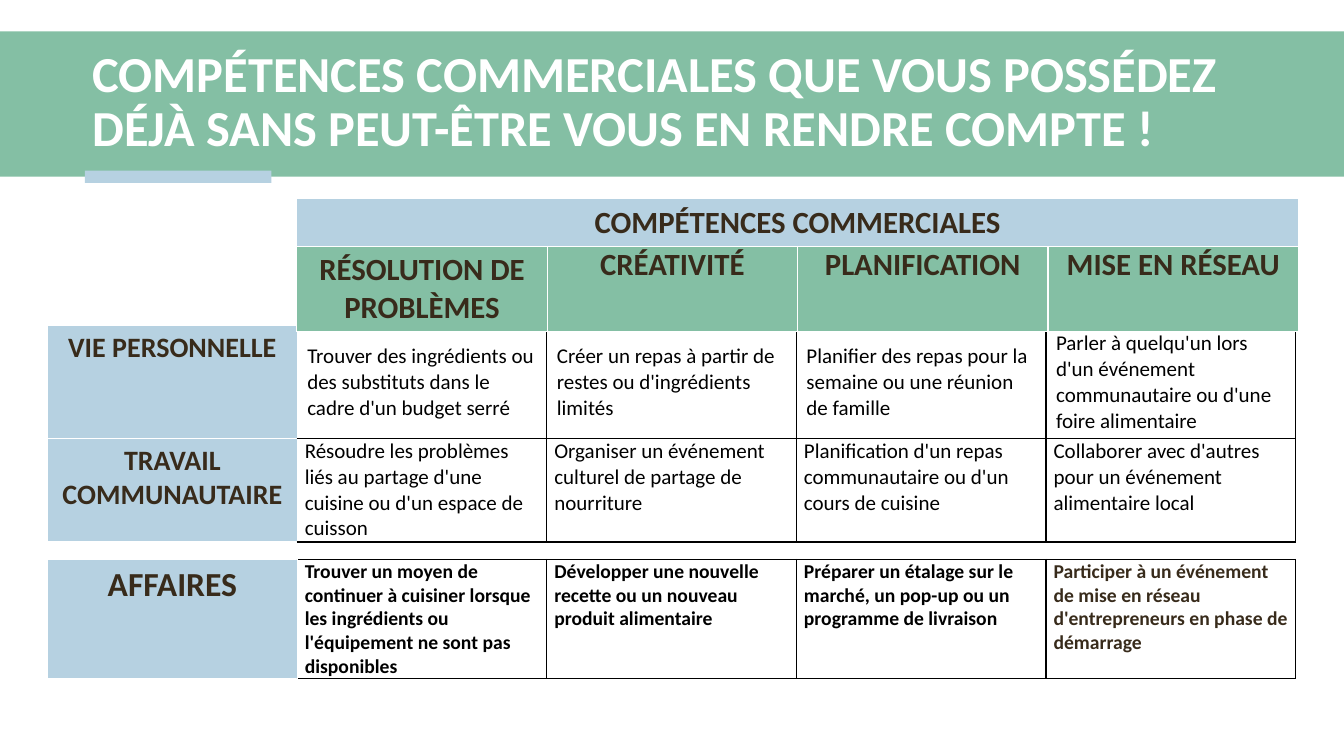
from dataclasses import dataclass, replace

from lxml import etree
from pptx import Presentation
from pptx.dml.color import RGBColor
from pptx.enum.shapes import MSO_SHAPE
from pptx.enum.text import MSO_ANCHOR, MSO_AUTO_SIZE, PP_ALIGN
from pptx.oxml.ns import qn
from pptx.util import Cm, Pt

RECTANGLE = MSO_SHAPE.RECTANGLE
TOP, MIDDLE = MSO_ANCHOR.TOP, MSO_ANCHOR.MIDDLE
LEFT, CENTER = PP_ALIGN.LEFT, PP_ALIGN.CENTER
NO_AUTOFIT = MSO_AUTO_SIZE.NONE

FONT = "Calibri"
GREEN, BLUE, BROWN = "84BFA4", "B6D1E1", "382B1B"
WHITE, BLACK = "FFFFFF", "000000"


@dataclass(frozen=True)
class CellStyle:
    size: float
    color: str = BLACK
    bold: bool = False
    fill: str | None = None
    align: PP_ALIGN = LEFT
    anchor: MSO_ANCHOR = TOP
    tight: bool = False
    border: str = BLACK


@dataclass(frozen=True)
class Row:
    height: float
    label: str
    label_style: CellStyle
    texts: list[str]
    style: CellStyle
    last_style: CellStyle | None = None


@dataclass(frozen=True)
class Grid:
    left: float
    top: float
    column: float
    rows: list[Row]
    merge_first_row: bool = False


def rgb(value: str) -> RGBColor:
    return RGBColor.from_string(value)


def add_bar(slide, left: float, top: float, width: float, height: float, color: str) -> None:
    bar = slide.shapes.add_shape(RECTANGLE, Cm(left), Cm(top), Cm(width), Cm(height))
    bar.shadow.inherit = False
    bar.fill.solid()
    bar.fill.fore_color.rgb = rgb(color)
    bar.line.fill.background()


def set_borders(cell, color: str, left_color: str) -> None:
    properties = cell._tc.get_or_add_tcPr()
    for index, side in enumerate(("lnL", "lnR", "lnT", "lnB")):
        line = etree.Element(qn(f"a:{side}"), w=str(Pt(1)))
        solid = etree.SubElement(line, qn("a:solidFill"))
        shade = left_color if side == "lnL" else color
        etree.SubElement(solid, qn("a:srgbClr"), val=shade)
        properties.insert(index, line)


def fill_cell(cell, text: str, style: CellStyle, left_color: str) -> None:
    cell.text = text
    cell.vertical_anchor = style.anchor
    if style.tight:
        cell.margin_left = cell.margin_right = Cm(0.19)
        cell.margin_top = cell.margin_bottom = Cm(0)
    if style.fill:
        cell.fill.solid()
        cell.fill.fore_color.rgb = rgb(style.fill)
    else:
        cell.fill.background()
    set_borders(cell, style.border, left_color)
    paragraph = cell.text_frame.paragraphs[0]
    paragraph.alignment = style.align
    font = paragraph.font
    font.name, font.size, font.bold = FONT, Pt(style.size), style.bold
    font.color.rgb = rgb(style.color)


def add_grid(slide, grid: Grid) -> None:
    columns = 1 + len(grid.rows[0].texts)
    height = sum(row.height for row in grid.rows)
    table = slide.shapes.add_table(
        len(grid.rows), columns, Cm(grid.left), Cm(grid.top),
        Cm(grid.column * columns), Cm(height)).table
    table.first_row = table.horz_banding = False
    for column in table.columns:
        column.width = Cm(grid.column)
    for r, row in enumerate(grid.rows):
        table.rows[r].height = Cm(row.height)
        fill_cell(table.cell(r, 0), row.label, row.label_style, WHITE)
        for c, text in enumerate(row.texts, start=1):
            is_last = c == columns - 1
            style = row.last_style if is_last and row.last_style else row.style
            fill_cell(table.cell(r, c), text, style, WHITE if c == 1 else style.border)
    if grid.merge_first_row:
        table.cell(0, 0).merge(table.cell(0, columns - 1))


# Cell styles
HEADING = CellStyle(22, BROWN, True, BLUE, CENTER, border=WHITE)
SKILL = replace(HEADING, fill=GREEN)
LABEL = replace(HEADING, size=20)
EXAMPLE = CellStyle(15, tight=True)
BUSINESS = CellStyle(14, bold=True, tight=True)

# Table contents
LIFE_AND_COMMUNITY = Grid(1.2, 8.21, 6.29, [
    Row(2.83, "VIE PERSONNELLE", LABEL, [
        "Trouver des ingrédients ou des substituts dans le cadre d'un budget serré",
        "Créer un repas à partir de restes ou d'ingrédients limités",
        "Planifier des repas pour la semaine ou une réunion de famille",
        "Parler à quelqu'un lors d'un événement communautaire ou d'une foire alimentaire",
    ], replace(EXAMPLE, anchor=MIDDLE, tight=False)),
    Row(2.6, "TRAVAIL COMMUNAUTAIRE", LABEL, [
        "Résoudre les problèmes liés au partage d'une cuisine ou d'un espace de cuisson",
        "Organiser un événement culturel de partage de nourriture",
        "Planification d'un repas communautaire ou d'un cours de cuisine",
        "Collaborer avec d'autres pour un événement alimentaire local",
    ], EXAMPLE),
])
SKILLS = Grid(7.48, 5.01, 6.31, [
    Row(1.19, "COMPÉTENCES COMMERCIALES", HEADING, [""] * 3, HEADING),
    Row(2.14, "RÉSOLUTION DE PROBLÈMES", SKILL,
        ["CRÉATIVITÉ", "PLANIFICATION", "MISE EN RÉSEAU"], replace(SKILL, tight=True)),
], merge_first_row=True)
BUSINESS_LIFE = Grid(1.2, 14.1, 6.29, [
    Row(2.98, "AFFAIRES", replace(LABEL, size=24), [
        "Trouver un moyen de continuer à cuisiner lorsque les ingrédients ou "
        "l'équipement ne sont pas disponibles",
        "Développer une nouvelle recette ou un nouveau produit alimentaire",
        "Préparer un étalage sur le marché, un pop-up ou un programme de livraison",
        "Participer à un événement de mise en réseau d'entrepreneurs en phase de démarrage",
    ], BUSINESS, replace(BUSINESS, color=BROWN)),
])


def add_title(slide) -> None:
    title = slide.shapes.title
    title.left, title.top, title.width, title.height = Cm(2.08), Cm(1.04), Cm(30.58), Cm(3.12)
    frame = title.text_frame
    frame.text = "COMPÉTENCES COMMERCIALES QUE VOUS POSSÉDEZ DÉJÀ SANS PEUT-ÊTRE VOUS EN RENDRE COMPTE !"
    frame.word_wrap = True
    frame.auto_size = NO_AUTOFIT
    frame.vertical_anchor = MIDDLE
    paragraph = frame.paragraphs[0]
    paragraph.alignment = LEFT
    paragraph.line_spacing = 0.9
    font = paragraph.font
    font.name, font.size, font.bold = FONT, Pt(36), True
    font.color.rgb = rgb(WHITE)
    # Bring the title in front of its band
    title.element.getparent().append(title.element)


def main() -> None:
    deck = Presentation()
    deck.slide_width, deck.slide_height = Cm(33.87), Cm(19.05)
    slide = deck.slides.add_slide(deck.slide_layouts[5])

    # Title band with accent
    add_bar(slide, 0, 0.79, 33.87, 3.66, GREEN)
    add_bar(slide, 2.14, 4.3, 4.7, 0.31, BLUE)
    add_title(slide)

    # Skills matrix
    for grid in (LIFE_AND_COMMUNITY, SKILLS, BUSINESS_LIFE):
        add_grid(slide, grid)

    deck.save("out.pptx")


if __name__ == "__main__":
    main()
